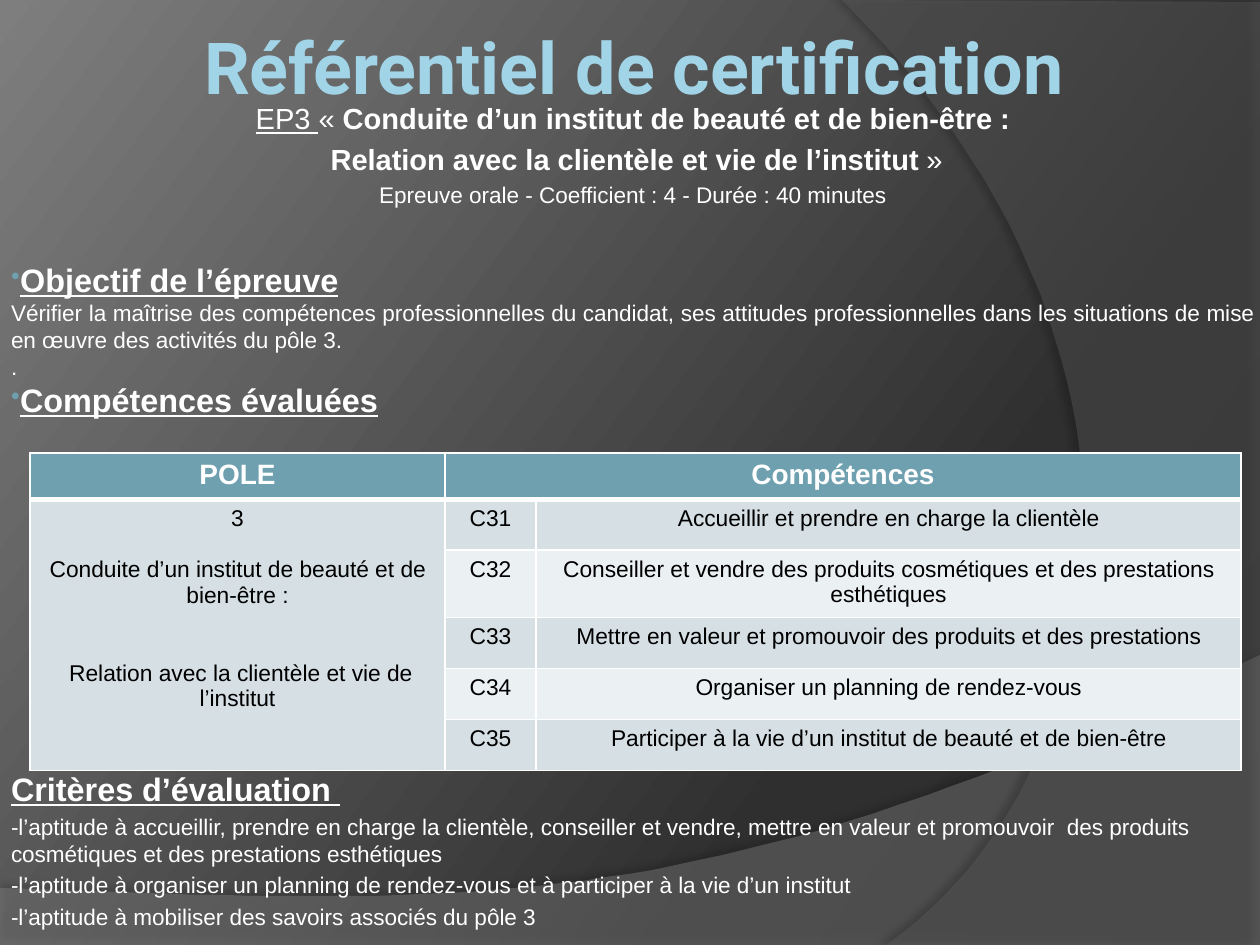
from lxml.etree import SubElement
from pptx import Presentation
from pptx.dml.color import RGBColor as RGB
from pptx.enum.text import MSO_ANCHOR as ANCHOR, MSO_AUTO_SIZE as AUTO, PP_ALIGN as AL
from pptx.oxml import parse_xml
from pptx.oxml.ns import nsdecls, qn
from pptx.util import Emu, Pt

PX = 914400 / 126
COLORS = {"title": "A1D4E7", "white": "FFFFFF", "black": "000000", "accent": "6EA0B0",
          "band": "D5DFE4", "pale": "EBF0F2", "wave": "7F7F7F", "arc": "5E5E5E"}
BACKGROUND = [(0, "282828"), (30, "2F2F2F"), (100, "7E7E7E")]
SMALL, LEAD, HEAD = 12.9, 16.6, 18.5

SUBTITLE = [
    ([("EP3 ", LEAD, "u"), ("« ", LEAD, ""),
      ("Conduite d’un institut de beauté et de bien-être :", LEAD, "b")], 0, False),
    ([(" Relation avec la clientèle et vie de l’institut", LEAD, "b"), (" »", LEAD, "")], 3.3, False),
    ([("Epreuve orale - Coefficient : 4 - Durée : 40 minutes", SMALL, "")], 2.6, False),
]
OBJECTIVE = [
    ([("Objectif de l’épreuve", HEAD, "bu")], 0, True),
    ([("Vérifier la maîtrise des compétences professionnelles du candidat, ses attitudes "
       "professionnelles dans les situations de mise en œuvre des activités du pôle 3.",
       SMALL, "")], 0, False),
    ([(".", SMALL, "")], 0, False),
    ([("Compétences évaluées", HEAD, "bu")], 0, True),
]
CRITERIA = [([("Critères d’évaluation ", HEAD, "bu")], 0, False)] + [
    ([(text, SMALL, "")], 2.6, False) for text in (
        "-l’aptitude à accueillir, prendre en charge la clientèle, conseiller et vendre, mettre en "
        "valeur et promouvoir  des produits cosmétiques et des prestations esthétiques",
        "-l’aptitude à organiser un planning de rendez-vous et à participer à la vie d’un institut",
        "-l’aptitude à mobiliser des savoirs associés du pôle 3")]
POLE = [("3", 0), ("Conduite d’un institut de beauté et de bien-être :", 15),
        (" Relation avec la clientèle et vie de l’institut", 30)]
SKILLS = [
    ("C31", "Accueillir et prendre en charge la clientèle"),
    ("C32", "Conseiller et vendre des produits cosmétiques et des prestations esthétiques"),
    ("C33", "Mettre en valeur et promouvoir des produits et des prestations"),
    ("C34", "Organiser un planning de rendez-vous"),
    ("C35", "Participer à la vie d’un institut de beauté et de bien-être"),
]


def px(n):
    """Turn pixels into EMU."""
    return Emu(round(n * PX))


def rgb(name):
    """Look up a named colour."""
    return RGB.from_string(COLORS[name])


def add_run(p, text, size, style="", color="white", font="Arial"):
    """Append one formatted run; style may hold b and u."""
    r = p.add_run()
    r.text = text
    r.font.name, r.font.size = font, Pt(size)
    r.font.bold, r.font.underline = "b" in style, "u" in style
    r.font.color.rgb = rgb(color)


def add_bullet(p):
    """Give a paragraph a small accent bullet."""
    pPr = p._p.get_or_add_pPr()
    color = SubElement(pPr, qn("a:buClr"))
    SubElement(color, qn("a:srgbClr"), val=COLORS["accent"])
    SubElement(pPr, qn("a:buSzPct"), val="80000")
    SubElement(pPr, qn("a:buChar"), char="•")


def bezier(p0, p1, p2, p3, steps=48):
    """Sample a cubic curve, leaving out its start."""
    for i in range(1, steps + 1):
        t = i / steps
        w = ((1 - t) ** 3, 3 * t * (1 - t) ** 2, 3 * t * t * (1 - t), t ** 3)
        yield tuple(sum(k * q[axis] for k, q in zip(w, (p0, p1, p2, p3))) for axis in (0, 1))


def paint_background(s):
    """Fill the slide with a diagonal grey gradient."""
    s.background.fill.gradient()
    old = s.element.find(".//" + qn("a:gradFill"))
    stops = "".join(f'<a:gs pos="{pos * 1000}"><a:srgbClr val="{c}"/></a:gs>'
                    for pos, c in BACKGROUND)
    new = parse_xml(f'<a:gradFill {nsdecls("a")} rotWithShape="1"><a:gsLst>{stops}</a:gsLst>'
                    f'<a:lin ang="{217 * 60000}" scaled="0"/></a:gradFill>')
    old.getparent().replace(old, new)


def add_swoosh(s, points, color, alpha, shadow):
    """Draw a translucent curved panel behind the title."""
    builder = s.shapes.build_freeform(*points[0], scale=PX)
    builder.add_line_segments(points[1:], close=True)
    sp = builder.convert_to_shape()
    sp.fill.solid()
    sp.fill.fore_color.rgb = rgb(color)
    sp.line.fill.background()
    spPr = sp.element.spPr
    tint = spPr.find(qn("a:solidFill")).find(qn("a:srgbClr"))
    SubElement(tint, qn("a:alpha"), val=str(alpha * 1000))
    opacity, distance, angle = shadow
    spPr.append(parse_xml(
        f'<a:effectLst {nsdecls("a")}><a:outerShdw blurRad="{Pt(4)}" dist="{Pt(distance)}" '
        f'dir="{angle * 60000}" algn="ctr" rotWithShape="0"><a:srgbClr val="{COLORS["black"]}">'
        f'<a:alpha val="{opacity * 1000}"/></a:srgbClr></a:outerShdw></a:effectLst>'))
    s.shapes.title.element.addprevious(sp.element)


def add_backdrop(s, w, h):
    """Place the gradient and the two curved panels."""
    paint_background(s)
    wave = [(0, 888), (0, h), (w, h), (w, 655)]
    wave += bezier((w, 655), (704, 919), (493, 906), (0, 888))
    add_swoosh(s, wave, "wave", 45, (35, 3.5, 270))
    arc = [(w, 2), (w, h), (886, h)]
    arc += bezier((886, h), (1123, 780), (1193, 346), (842, 0))
    add_swoosh(s, arc, "arc", 40, (45, 4, 180))


def set_title(s, x, y, w, h):
    """Move and fill the title placeholder."""
    sp = s.shapes.title
    sp.left, sp.top, sp.width, sp.height = map(px, (x, y, w, h))
    tf = sp.text_frame
    tf.auto_size, tf.vertical_anchor = AUTO.NONE, ANCHOR.TOP
    p = tf.paragraphs[0]
    p.alignment = AL.CENTER
    add_run(p, "Référentiel de certification", 41, "b", "title", "Roboto")


def add_text(s, x, y, w, h, paragraphs, align):
    """Add a bottom-anchored text block."""
    tf = s.shapes.add_textbox(*map(px, (x, y, w, h))).text_frame
    tf.word_wrap, tf.vertical_anchor = True, ANCHOR.BOTTOM
    tf.margin_left = tf.margin_right = px(6)
    tf.margin_top = tf.margin_bottom = 0
    for i, (runs, before, bullet) in enumerate(paragraphs):
        p = tf.add_paragraph() if i else tf.paragraphs[0]
        p.alignment, p.space_before = align, Pt(before)
        if bullet:
            add_bullet(p)
        for run in runs:
            add_run(p, *run)


def style_cell(cell, fill, bottom):
    """Fill a cell and give it white borders."""
    cell.fill.solid()
    cell.fill.fore_color.rgb = rgb(fill)
    tcPr = cell._tc.get_or_add_tcPr()
    for i, (side, width) in enumerate((("L", 1), ("R", 1), ("T", 1), ("B", bottom))):
        tcPr.insert(i, parse_xml(
            f'<a:ln{side} {nsdecls("a")} w="{Pt(width)}"><a:solidFill>'
            f'<a:srgbClr val="{COLORS["white"]}"/></a:solidFill></a:ln{side}>'))


def fill_cell(cell, paragraphs, size=13, style="", color="black"):
    """Write centred paragraphs, each with its space before."""
    for i, (text, before) in enumerate(paragraphs):
        p = cell.text_frame.add_paragraph() if i else cell.text_frame.paragraphs[0]
        p.alignment, p.space_before = AL.CENTER, Pt(before)
        add_run(p, text, size, style, color)


def add_skills_table(s, x, y, cols, rows):
    """Build the table of assessed skills."""
    frame = s.shapes.add_table(len(rows), len(cols), *map(px, (x, y, sum(cols), sum(rows))))
    table = frame.table
    for col, width in zip(table.columns, cols):
        col.width = px(width)
    for i, (row, height) in enumerate(zip(table.rows, rows)):
        row.height = px(height)
        for j, cell in enumerate(row.cells):
            fill = "band" if i % 2 or j == 0 else "pale"
            style_cell(cell, fill if i else "accent", 1 if i else 3)
    table.cell(0, 1).merge(table.cell(0, 2))
    table.cell(1, 0).merge(table.cell(len(SKILLS), 0))
    for j, text in enumerate(("POLE", "Compétences")):
        fill_cell(table.cell(0, j), [(text, 0)], 16, "b", "white")
    fill_cell(table.cell(1, 0), POLE)
    for i, skill in enumerate(SKILLS, 1):
        for j, text in enumerate(skill, 1):
            fill_cell(table.cell(i, j), [(text, 0)])


def main():
    """Build and save the slide."""
    prs = Presentation()
    prs.slide_width, prs.slide_height = px(1260), px(945)
    s = prs.slides.add_slide(prs.slide_layouts[5])
    add_backdrop(s, 1260, 945)
    set_title(s, 74, 16, 1121, 139)
    add_text(s, 5, 104, 1255, 104, SUBTITLE, AL.CENTER)
    add_text(s, 5, 260, 1255, 159, OBJECTIVE, AL.JUSTIFY)
    add_skills_table(s, 30, 453, (415, 91, 705), (43, 51, 63, 51, 51, 51))
    add_text(s, 5, 770, 1255, 160, CRITERIA, AL.LEFT)
    prs.save("out.pptx")


if __name__ == "__main__":
    main()
